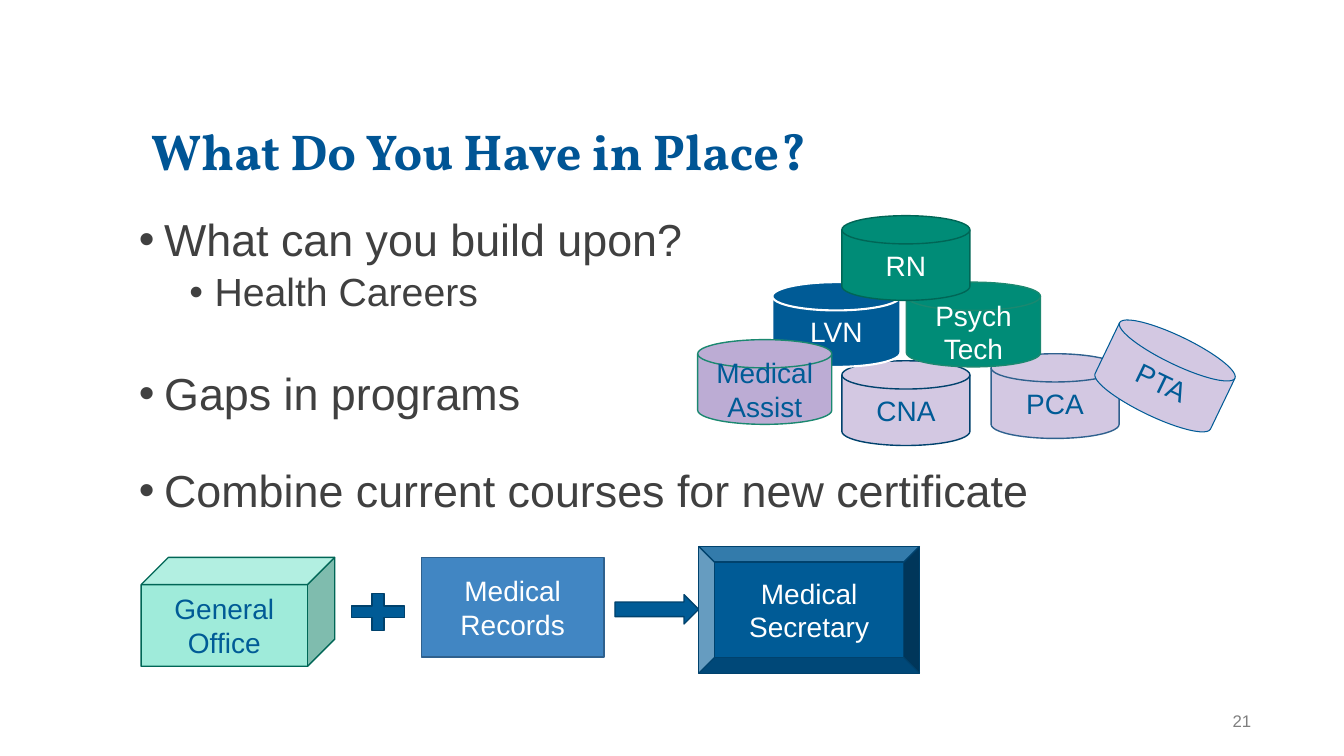
from lxml import etree
from pptx import Presentation
from pptx.dml.color import RGBColor
from pptx.enum.shapes import MSO_SHAPE as SHAPE
from pptx.enum.text import MSO_ANCHOR as ANCHOR, PP_ALIGN as ALIGN
from pptx.oxml.ns import qn
from pptx.util import Inches, Pt

BLUE, NAVY, SLATE = "005B96", "00426D", "2F618E"
GREEN, DARK_GREEN, MID_GREEN = "008C77", "006656", "1B8870"
LILAC, WHITE, GREY = "D3C8E2", "FFFFFF", "404040"


def rgb(value):
    """Turn a hex string into a colour."""
    return RGBColor.from_string(value)


def write(p, text, size=20, color=GREY, font="Arial", bold=False,
          align=ALIGN.LEFT, spacing=None, before=0, indent=None):
    """Fill one paragraph with formatted text, bulleted if indented."""
    p.alignment = align
    p.space_before = Pt(before)
    if spacing:
        p.line_spacing = spacing
    if indent:
        pPr = p._p.get_or_add_pPr()
        pPr.set("marL", str(Inches(indent)))
        pPr.set("indent", str(Inches(-0.25)))
        clr = etree.SubElement(pPr, qn("a:buClr"))
        etree.SubElement(clr, qn("a:srgbClr"), val=color)
        etree.SubElement(pPr, qn("a:buFont"), typeface="Arial")
        etree.SubElement(pPr, qn("a:buChar"), char="•")
    r = p.add_run()
    r.text = text
    r.font.name, r.font.size, r.font.bold = font, Pt(size), bold
    r.font.color.rgb = rgb(color)


class Deck:
    """Hold the presentation style and the current slide."""

    def __init__(self):
        """Start a widescreen presentation with one blank slide."""
        self.prs = Presentation()
        self.prs.slide_width, self.prs.slide_height = Inches(13.33), Inches(7.5)
        self.s = self.prs.slides.add_slide(self.prs.slide_layouts[6])

    def text(self, box, paragraphs, anchor=ANCHOR.TOP, right=0.1):
        """Add a text box from (text, format) pairs."""
        tf = self.s.shapes.add_textbox(*map(Inches, box)).text_frame
        tf.word_wrap = True
        tf.vertical_anchor = anchor
        tf.margin_right = Inches(right)
        for i, (text, fmt) in enumerate(paragraphs):
            write(tf.add_paragraph() if i else tf.paragraphs[0], text, **fmt)

    def shape(self, kind, box, fill, line, text="", color=WHITE,
              width=1, rotation=0, adjust=None):
        """Add a filled, outlined shape with an optional centred label."""
        sp = self.s.shapes.add_shape(kind, *map(Inches, box))
        sp.shadow.inherit = False
        sp.rotation = rotation
        if adjust is not None:
            sp.adjustments[0] = adjust
        sp.fill.solid()
        sp.fill.fore_color.rgb = rgb(fill)
        sp.line.color.rgb = rgb(line)
        sp.line.width = Pt(width)
        if text:
            tf = sp.text_frame
            tf.word_wrap = True
            tf.vertical_anchor = ANCHOR.MIDDLE
            write(tf.paragraphs[0], text, color=color, align=ALIGN.CENTER)

    def disk(self, text, left, top, fill, line, color=BLUE, wide=1.27, **fmt):
        """Add one career disk."""
        self.shape(SHAPE.FLOWCHART_MAGNETIC_DISK, (left, top, wide, 0.84),
                   fill, line, text, color, **fmt)


def main():
    """Build and save the slide."""
    deck = Deck()
    deck.text((1.4, 0.4, 10.99, 1.45), [("What Do You Have in Place?", dict(
        size=36, color="005595", font="Vollkorn", bold=True, spacing=0.9))],
        ANCHOR.BOTTOM)
    deck.text((11.41, 6.95, 1, 0.4), [("21", dict(
        size=12, color="7F7F7F", align=ALIGN.RIGHT))], ANCHOR.MIDDLE, right=0)

    deck.shape(SHAPE.CUBE, (1.4, 5.53, 1.92, 1.08), "9FEBDA", DARK_GREEN,
               "General Office", BLUE)
    deck.shape(SHAPE.MATH_PLUS, (3.39, 5.82, 0.72, 0.5), BLUE, NAVY, adjust=0.235)
    deck.shape(SHAPE.RECTANGLE, (4.18, 5.53, 1.81, 0.99), "4186C3", SLATE,
               "Medical Records")
    deck.shape(SHAPE.RIGHT_ARROW, (6.1, 5.9, 0.83, 0.29), BLUE, NAVY)
    deck.shape(SHAPE.BEVEL, (6.93, 5.42, 2.19, 1.26), BLUE, NAVY,
               "Medical Secretary")

    main_point = dict(size=32, spacing=0.9, indent=0.25)
    deck.text((1.28, 2.11, 11, 5.37), [
        ("What can you build upon?", main_point),
        ("Health Careers", dict(size=28, spacing=0.9, indent=0.75, before=5)),
        ("Gaps in programs", dict(main_point, before=40)),
        ("Combine current courses for new certificate",
         dict(main_point, before=35)),
    ])

    deck.disk("CNA", 8.35, 3.58, LILAC, NAVY)
    deck.disk("PCA", 9.83, 3.51, LILAC, SLATE)
    deck.disk("LVN", 7.66, 2.8, BLUE, WHITE, WHITE, width=1.5)
    deck.disk("Psych Tech", 8.99, 2.8, GREEN, MID_GREEN, WHITE, wide=1.33)
    deck.disk("PTA", 10.92, 3.31, LILAC, BLUE, width=0.75, rotation=25.7)
    deck.disk("RN", 8.35, 2.14, GREEN, DARK_GREEN, WHITE)
    deck.disk("Medical Assist", 6.92, 3.37, "BCACD4", MID_GREEN, wide=1.33)
    deck.prs.save("out.pptx")


if __name__ == "__main__":
    main()
